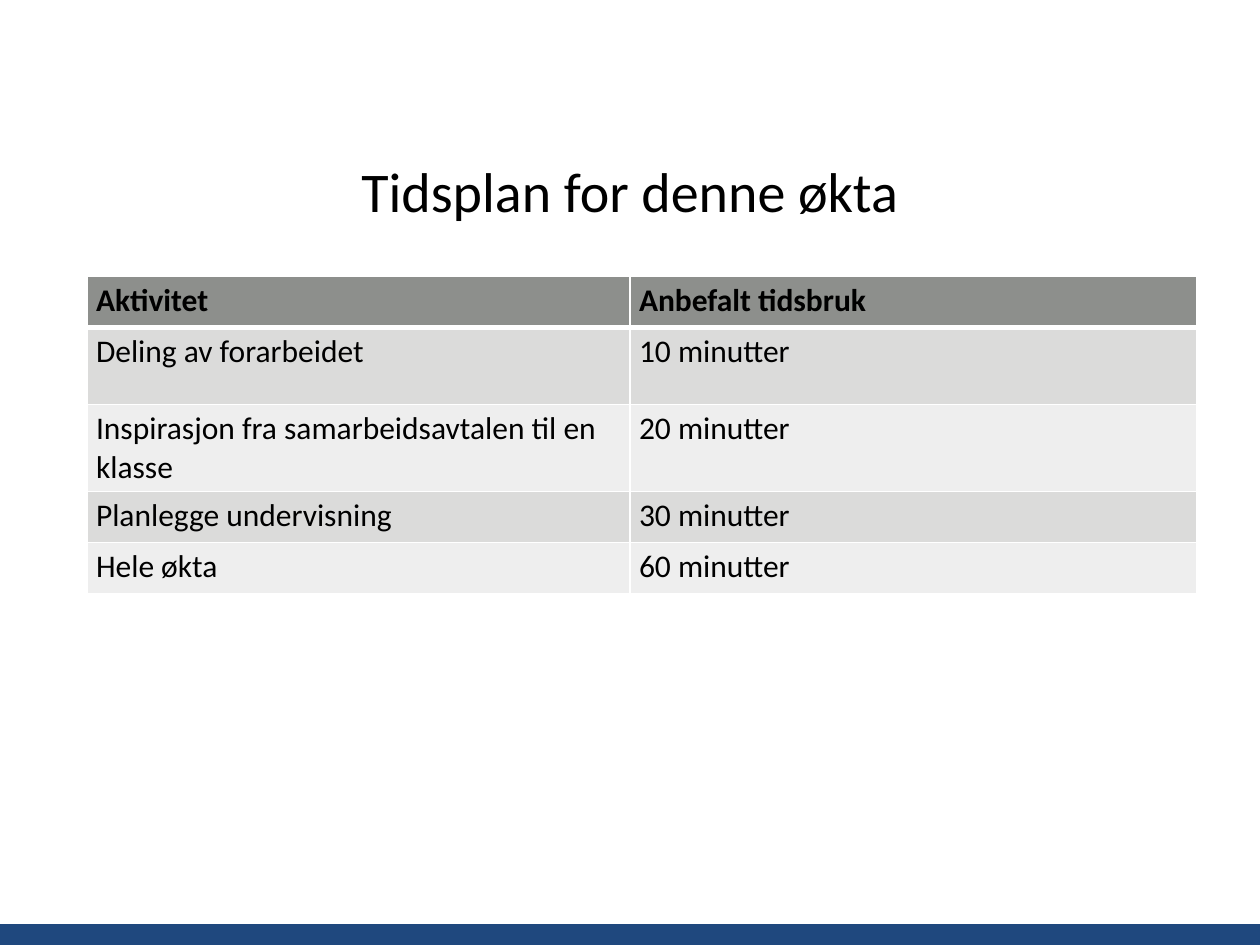
from lxml import etree
from pptx import Presentation
from pptx import util as u
from pptx.dml.color import RGBColor
from pptx.enum import shapes, text
from pptx.oxml.ns import qn

FONT = "Calibri"
SCHEDULE = [
    ("Aktivitet", "Anbefalt tidsbruk"),
    ("Deling av forarbeidet", "10 minutter"),
    ("Inspirasjon fra samarbeidsavtalen til en klasse", "20 minutter"),
    ("Planlegge undervisning", "30 minutter"),
    ("Hele økta", "60 minutter"),
]
COLUMN_WIDTHS = (310.3, 324)
ROW_HEIGHTS = (29.2, 44, 49.2, 29.2, 29.2)
HEADER_FILL = "8D8F8C"
BAND_FILLS = ("EEEEEE", "DBDBDA")


def paint(fill, color):
    """Give a fill one solid colour."""
    fill.solid()
    fill.fore_color.rgb = RGBColor.from_string(color)


def style_font(paragraph, size, bold=False):
    """Set the font of a whole paragraph."""
    font = paragraph.font
    font.name, font.size, font.bold = FONT, u.Pt(size), bold
    paint(font.fill, "000000")


def add_footer_bar(slide):
    """Draw the blue bar along the bottom edge."""
    bar = slide.shapes.add_shape(
        shapes.MSO_SHAPE.RECTANGLE, u.Pt(0), u.Pt(528), u.Pt(720), u.Pt(12))
    bar.shadow.inherit = False
    paint(bar.fill, "1F487E")
    bar.line.fill.background()


def set_title(slide, wording):
    """Place and format the title placeholder."""
    title = slide.shapes.title
    title.left, title.top = u.Pt(36), u.Pt(72)
    title.width, title.height = u.Pt(648), u.Pt(72.7)
    frame = title.text_frame
    frame.text = wording
    frame.vertical_anchor = text.MSO_ANCHOR.MIDDLE
    paragraph = frame.paragraphs[0]
    paragraph.alignment = text.PP_ALIGN.CENTER
    style_font(paragraph, 32)


def set_borders(cell, bottom_width):
    """Give a cell white borders, ahead of its fill."""
    properties = cell._tc.get_or_add_tcPr()
    widths = {"a:lnL": 1, "a:lnR": 1, "a:lnT": 1, "a:lnB": bottom_width}
    for tag, width in widths.items():
        line = etree.SubElement(properties, qn(tag), w=str(u.Pt(width)))
        solid = etree.SubElement(line, qn("a:solidFill"))
        etree.SubElement(solid, qn("a:srgbClr"), val="FFFFFF")


def fill_cell(cell, wording, row):
    """Write and format one cell according to its row."""
    is_header = row == 0
    cell.text = wording
    cell.margin_left = cell.margin_right = u.Pt(5.2)
    cell.margin_top = cell.margin_bottom = u.Pt(2.9)
    style_font(cell.text_frame.paragraphs[0], 18, is_header)
    set_borders(cell, 3 if is_header else 1)
    paint(cell.fill, HEADER_FILL if is_header else BAND_FILLS[row % 2])


def add_schedule(slide):
    """Add the table of activities and times."""
    table = slide.shapes.add_table(
        len(SCHEDULE), len(COLUMN_WIDTHS), u.Pt(49.7), u.Pt(158),
        u.Pt(sum(COLUMN_WIDTHS)), u.Pt(sum(ROW_HEIGHTS))).table
    for column, width in zip(table.columns, COLUMN_WIDTHS):
        column.width = u.Pt(width)
    for row, (height, entries) in enumerate(zip(ROW_HEIGHTS, SCHEDULE)):
        table.rows[row].height = u.Pt(height)
        for column, wording in enumerate(entries):
            fill_cell(table.cell(row, column), wording, row)


def main():
    """Build and save the slide."""
    presentation = Presentation()
    presentation.slide_width, presentation.slide_height = u.Pt(720), u.Pt(540)
    slide = presentation.slides.add_slide(presentation.slide_layouts[5])
    paint(slide.background.fill, "FFFFFF")
    add_footer_bar(slide)
    set_title(slide, "Tidsplan for denne økta")
    add_schedule(slide)
    presentation.save("out.pptx")


if __name__ == "__main__":
    main()
